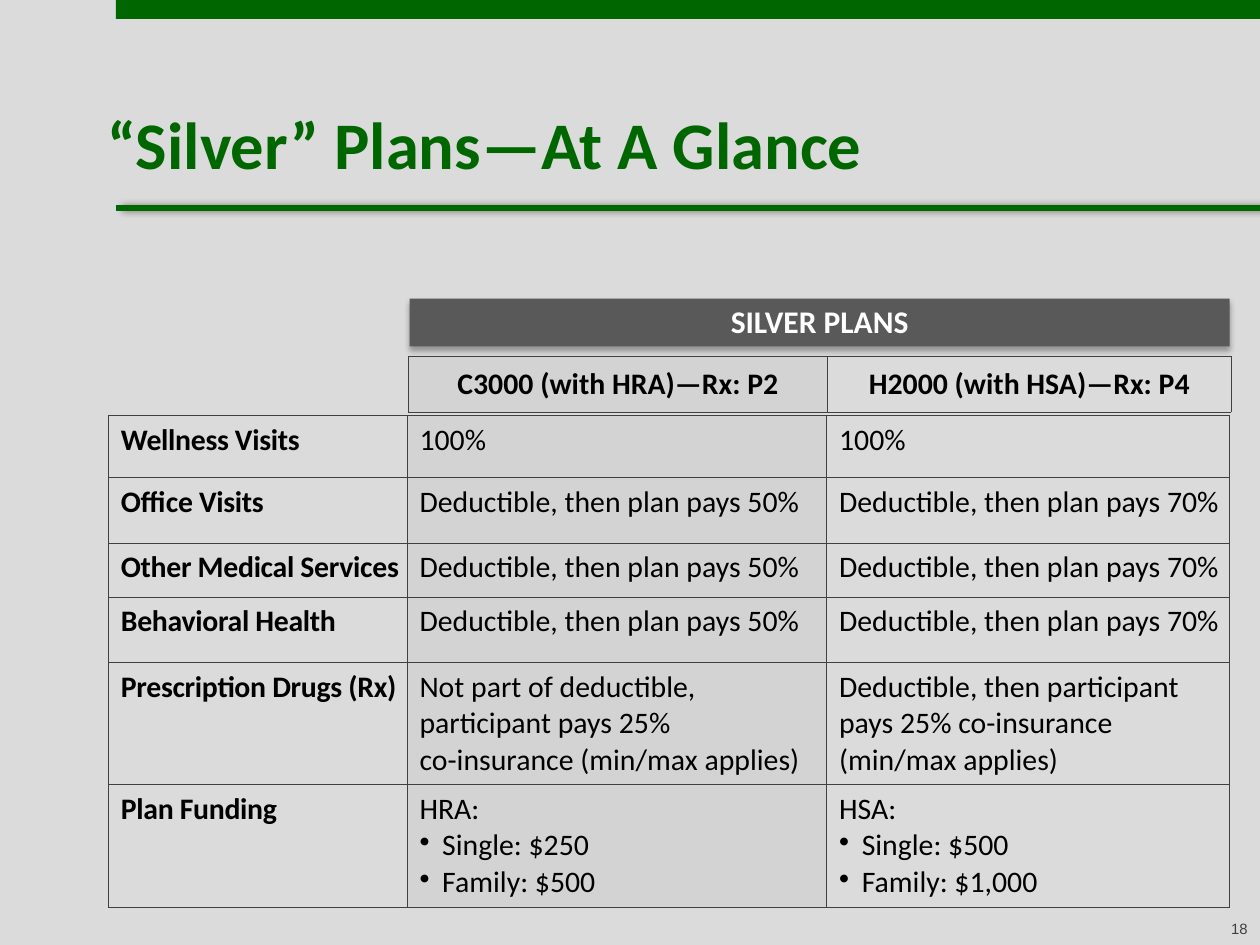
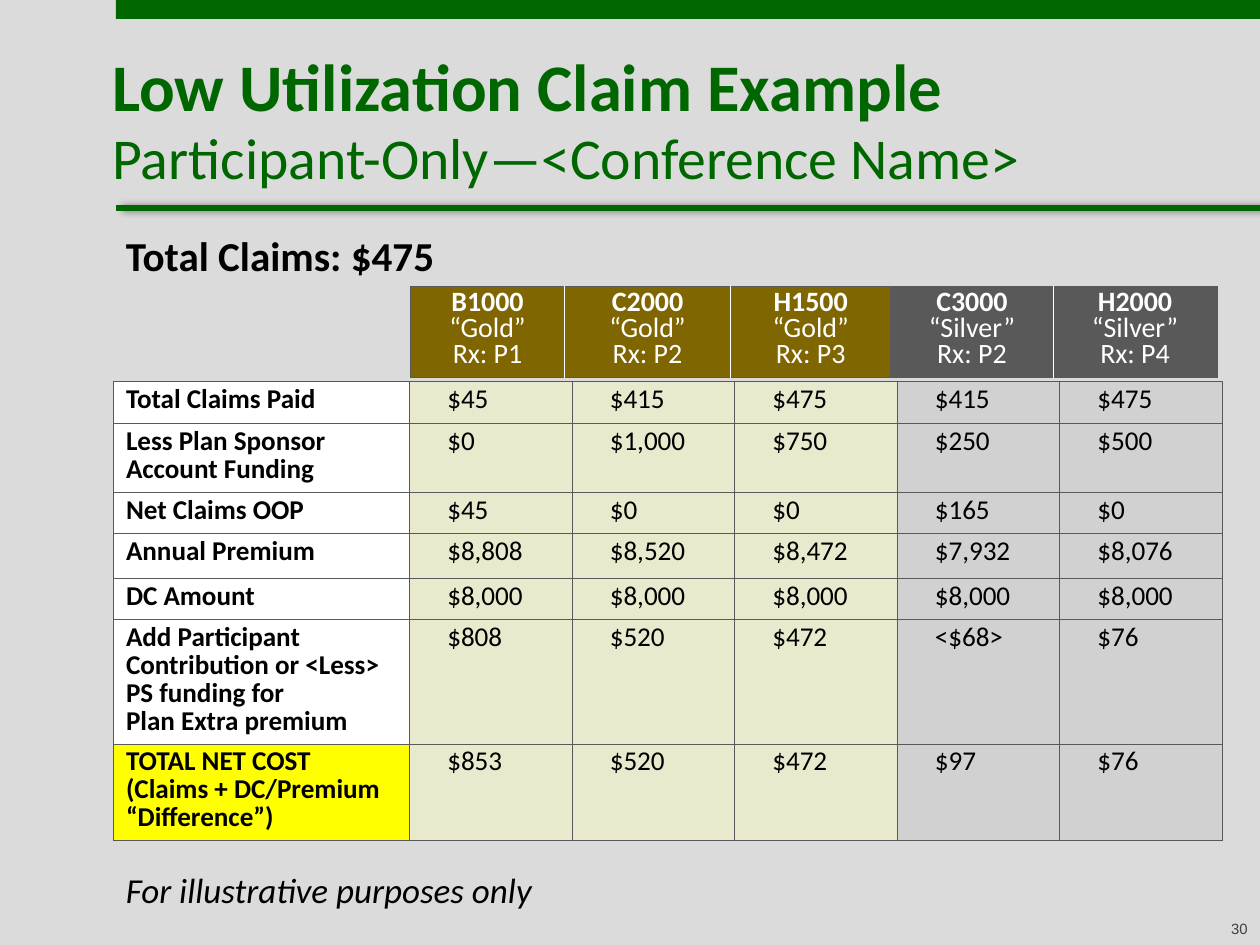
from lxml import etree
from pptx import Presentation
from pptx.dml.color import RGBColor
from pptx.enum.shapes import MSO_CONNECTOR, MSO_SHAPE
from pptx.enum.text import MSO_ANCHOR as Anchor, PP_ALIGN as Align
from pptx.oxml.ns import qn
from pptx.util import Inches, Pt

COLORS = {
    "background": "DBDBDB", "green": "006600", "black": "000000", "white": "FFFFFF",
    "grid": "404040", "silver": "595959", "gold": "806600", "shade": "D3D3D3",
    "gold_tint": "E9E9CE", "silver_tint": "D1D1D1", "highlight": "FFFF00",
}
TITLE = {"size": 38, "bold": True, "color": "green"}
BULLET = "• "


def rgb(name):
    return RGBColor.from_string(COLORS[name])


def inches(values):
    return [Inches(value) for value in values]


def add_color(parent, name, alpha=None):
    color = etree.SubElement(parent, qn("a:srgbClr"), val=COLORS[name])
    if alpha:
        etree.SubElement(color, qn("a:alpha"), val=str(alpha * 1000))


def set_shadow(shape, alpha, blur, distance, angle):
    effects = etree.SubElement(shape._element.spPr, qn("a:effectLst"))
    shadow = etree.SubElement(
        effects, qn("a:outerShdw"), blurRad=str(Pt(blur)), dist=str(Pt(distance)),
        dir=str(angle * 60000), algn="t", rotWithShape="0")
    add_color(shadow, "black", alpha)


def set_borders(cell, edges):
    properties = cell._tc.get_or_add_tcPr()
    for position, (edge, color) in enumerate(edges.items()):
        line = etree.Element(qn(f"a:{edge}"), w=str(Pt(0.5)))
        add_color(etree.SubElement(line, qn("a:solidFill")), color)
        properties.insert(position, line)


class Deck:
    """Holds the shared style and the current slide."""

    def __init__(self):
        self.presentation = Presentation()
        self.presentation.slide_width = Inches(10)
        self.presentation.slide_height = Inches(7.5)
        self.slide = None

    def new_slide(self, number):
        self.slide = self.presentation.slides.add_slide(self.presentation.slide_layouts[6])
        background = self.slide.background.fill
        background.solid()
        background.fore_color.rgb = rgb("background")
        self.bar((0.92, 0, 9.1, 0.15), "green")
        self.rule((0.92, 1.65), (10.02, 1.65))
        self.text((9.16, 7.25, 0.84, 0.24), [str(number)], size=8.5, name="Arial",
                  color="grid", alignment=Align.RIGHT)

    def bar(self, box, fill):
        shape = self.slide.shapes.add_shape(MSO_SHAPE.RECTANGLE, *inches(box))
        shape.fill.solid()
        shape.fill.fore_color.rgb = rgb(fill)
        shape.line.fill.background()
        shape.shadow.inherit = False
        return shape

    def rule(self, start, end):
        line = self.slide.shapes.add_connector(
            MSO_CONNECTOR.STRAIGHT, *inches(start + end))
        line.line.color.rgb = rgb("green")
        line.line.width = Pt(3.5)
        set_shadow(line, 40, 4, 3, 0)

    def banner(self, box, label):
        shape = self.bar(box, "silver")
        shape._element.spPr.remove(shape._element.spPr.find(qn("a:effectLst")))
        set_shadow(shape, 32, 3.5, 2.2, 90)
        self.frame(shape.text_frame, (0, 0.05, 0, 0.05), Anchor.MIDDLE)
        self.add_text(shape.text_frame, [label], size=18, bold=True, color="white",
                      alignment=Align.CENTER, line_spacing=Pt(20))

    def text(self, box, paragraphs, margins=(0.1, 0.05, 0.1, 0.05), anchor=Anchor.TOP, **style):
        shape = self.slide.shapes.add_textbox(*inches(box))
        self.frame(shape.text_frame, margins, anchor)
        self.add_text(shape.text_frame, paragraphs, **style)

    def frame(self, target, margins, anchor):
        """Set insets and anchor on a text frame or a table cell."""
        for side, margin in zip(("left", "top", "right", "bottom"), margins):
            setattr(target, f"margin_{side}", Inches(margin))
        target.vertical_anchor = anchor
        target.word_wrap = True

    def add_text(self, frame, paragraphs, **style):
        """Add paragraphs given as text or as (text, style changes)."""
        for index, item in enumerate(paragraphs):
            text, changes = (item, {}) if isinstance(item, str) else item
            paragraph = frame.add_paragraph() if index else frame.paragraphs[0]
            self.paragraph(paragraph, text, **{**style, **changes})

    def paragraph(self, paragraph, text, size, color="black", name="Calibri",
                  alignment=Align.LEFT, line_spacing=None, spacing=None, **font_style):
        paragraph.alignment = alignment
        paragraph.line_spacing = line_spacing
        if text.startswith(BULLET):
            text = text.removeprefix(BULLET)
            properties = paragraph._p.get_or_add_pPr()
            properties.set("marL", str(Inches(0.18)))
            properties.set("indent", str(-Inches(0.18)))
            etree.SubElement(properties, qn("a:buChar"), char=BULLET.strip())
        for index, line in enumerate(text.split("\n")):
            if index:
                paragraph.add_line_break()
            run = paragraph.add_run()
            run.text = line
            for key, value in {"size": Pt(size), "name": name, **font_style}.items():
                setattr(run.font, key, value)
            run.font.color.rgb = rgb(color)
            if spacing:
                run._r.get_or_add_rPr().set("spc", str(spacing))

    def table(self, corner, widths, heights, rows, columns, border, divider=None,
              anchor=Anchor.TOP, **style):
        """Each column has a fill, margins and style; divider parts columns of equal fill."""
        box = (*corner, sum(widths), sum(heights))
        table = self.slide.shapes.add_table(len(rows), len(widths), *inches(box)).table
        table.first_row = table.horz_banding = False
        for column, width in zip(table.columns, widths):
            column.width = Inches(width)
        for row, height in zip(table.rows, heights):
            row.height = Inches(height)
        fills = [column["fill"] for column in columns]
        seams = [divider if divider and left == right else border
                 for left, right in zip(fills, fills[1:])]
        seams = [border, *seams, border]
        for r, row in enumerate(rows):
            for c, content in enumerate(row):
                cell = table.cell(r, c)
                cell.fill.solid()
                cell.fill.fore_color.rgb = rgb(fills[c])
                self.frame(cell, columns[c]["margins"], anchor)
                paragraphs = [content] if isinstance(content, str) else content
                self.add_text(cell.text_frame, paragraphs,
                              **{**style, **columns[c].get("style", {})})
                set_borders(cell, {"lnL": seams[c], "lnR": seams[c + 1],
                                   "lnT": border, "lnB": border})
        return table


def silver_plans(deck):
    deck.new_slide(18)
    deck.text((0.85, 0.82, 8.73, 0.59), ["“Silver” Plans—At A Glance"],
              margins=(0, 0, 0, 0), **TITLE)

    # Benefits by plan
    margins = (0.1, 0.05, 0.05, 0.05)
    label_style = {"bold": True, "spacing": -20}
    pays = ["Deductible, then plan pays 50%", "Deductible, then plan pays 70%"]
    plan_widths = [3.33, 3.2]
    deck.table(
        (0.86, 3.3), [2.37, *plan_widths], [0.49, 0.52, 0.43, 0.52, 0.97, 0.97],
        [
            ["Wellness Visits", "100%", "100%"],
            ["Office Visits", *pays],
            ["Other Medical Services", *pays],
            ["Behavioral Health", *pays],
            ["Prescription Drugs (Rx)",
             "Not part of deductible, participant pays 25%\nco-insurance (min/max applies)",
             "Deductible, then participant pays 25% co-insurance (min/max applies)"],
            ["Plan Funding",
             ["HRA:", BULLET + "Single: $250", BULLET + "Family: $500"],
             ["HSA:", BULLET + "Single: $500", BULLET + "Family: $1,000"]],
        ],
        [{"fill": "background", "margins": margins, "style": label_style},
         {"fill": "shade", "margins": margins},
         {"fill": "background", "margins": margins}],
        "grid", size=17)

    # Plan names
    deck.table(
        (3.24, 2.83), plan_widths, [0.44],
        [["C3000 (with HRA)—Rx: P2", "H2000 (with HSA)—Rx: P4"]],
        [{"fill": fill, "margins": (0.05,) * 4} for fill in ("shade", "background")],
        "grid", anchor=Anchor.MIDDLE, size=17, bold=True, alignment=Align.CENTER)
    deck.banner((3.25, 2.37, 6.51, 0.38), "SILVER PLANS")


def claim_example(deck):
    deck.new_slide(30)
    deck.text((0.89, 0.42, 9.11, 1.14),
              ["Low Utilization Claim Example",
               ("Participant-Only—<Conference Name>", {"size": 33, "bold": False})],
              margins=(0, 0, 0, 0), anchor=Anchor.MIDDLE, line_spacing=Pt(38), **TITLE)

    # Costs by plan
    margins = (0.1, 0.05, 0.1, 0.05)
    tints = ["gold_tint"] * 3 + ["silver_tint"] * 2
    costs = deck.table(
        (0.9, 3.03), [2.35] + [1.29] * 5, [0.33, 0.55, 0.32, 0.36, 0.32, 0.99, 0.76],
        [
            ["Total Claims Paid", "$45", "$415", "$475", "$415", "$475"],
            ["Less Plan Sponsor Account Funding", "$0", "$1,000", "$750", "$250", "$500"],
            ["Net Claims OOP", "$45", "$0", "$0", "$165", "$0"],
            ["Annual Premium", "$8,808", "$8,520", "$8,472", "$7,932", "$8,076"],
            ["DC Amount"] + ["$8,000"] * 5,
            ["Add Participant\nContribution or <Less> PS funding for\nPlan Extra premium",
             "$808", "$520", "$472", "<$68>", "$76"],
            ["TOTAL NET COST\n(Claims + DC/Premium “Difference”)",
             "$853", "$520", "$472", "$97", "$76"],
        ],
        [{"fill": "white", "margins": margins, "style": {"bold": True}}]
        + [{"fill": tint, "margins": (0.3, 0.05, 0.1, 0.05)} for tint in tints],
        "silver", size=15.5, line_spacing=Pt(16))
    costs.cell(6, 0).fill.fore_color.rgb = rgb("highlight")

    # Plan headings
    plans = [("B1000", "Gold", "P1"), ("C2000", "Gold", "P2"), ("H1500", "Gold", "P3"),
             ("C3000", "Silver", "P2"), ("H2000", "Silver", "P4")]
    deck.table(
        (3.26, 2.27), [1.22, 1.32, 1.27, 1.29, 1.3], [0.72],
        [[[(plan, {"bold": True}), f"“{tier}”", f"Rx: {drug_plan}"]
          for plan, tier, drug_plan in plans]],
        [{"fill": tier.lower(), "margins": margins} for _, tier, _ in plans],
        "silver", divider="white", size=16, color="white",
        alignment=Align.CENTER, line_spacing=Pt(15))

    # Claim total and note
    deck.text((0.9, 1.78, 8.77, 0.5), ["Total Claims: $475"], size=23.5, bold=True)
    deck.text((0.9, 6.84, 8.77, 0.44), ["For illustrative purposes only"],
              size=20, italic=True)


def main():
    deck = Deck()
    silver_plans(deck)
    claim_example(deck)
    deck.presentation.save("out.pptx")


if __name__ == "__main__":
    main()
